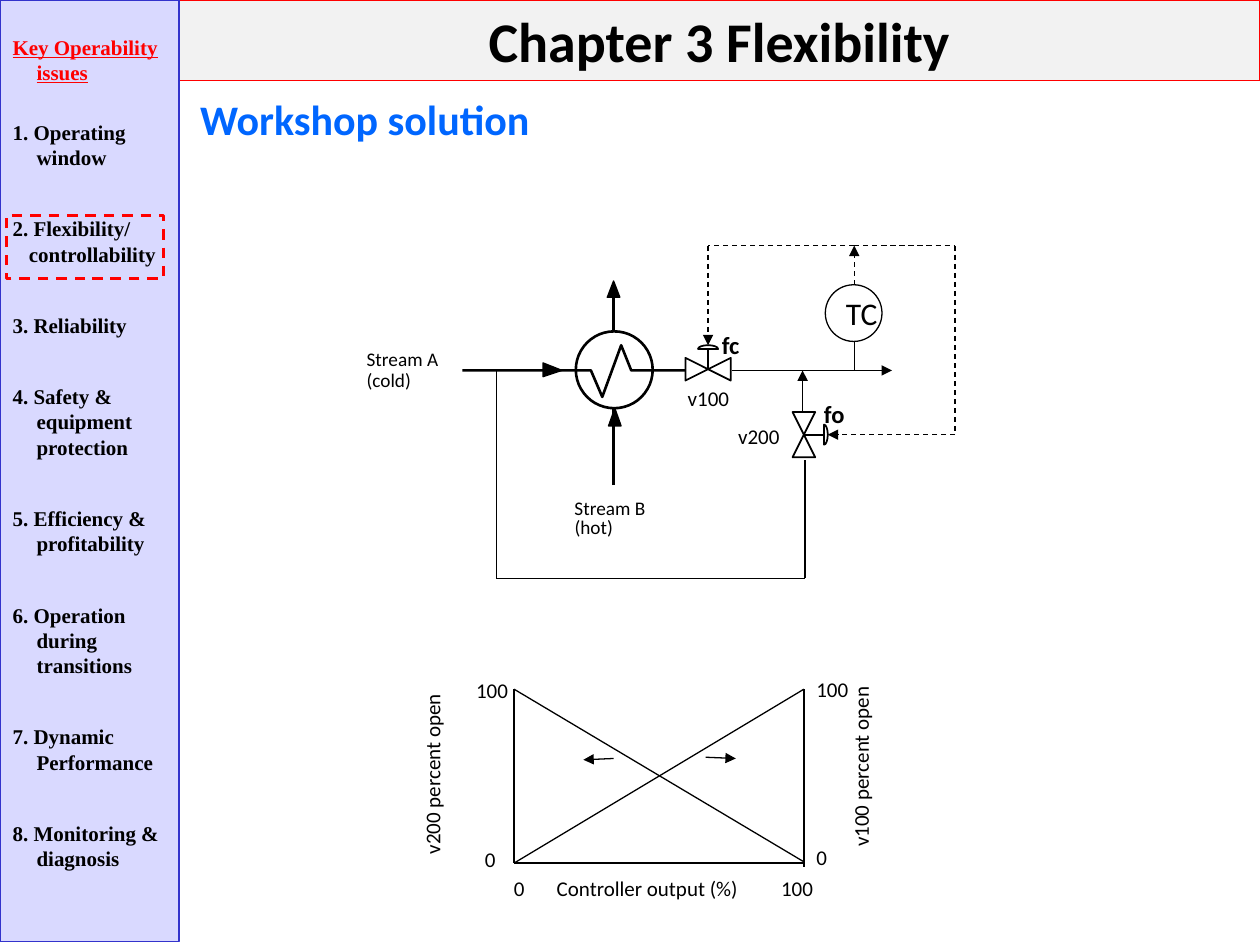
"""Build the flexibility workshop slide with its process sketch and valve chart."""
import math
from dataclasses import dataclass
from typing import NamedTuple

import lxml.etree
import pptx
import pptx.dml.color
import pptx.enum.dml
import pptx.enum.shapes
import pptx.enum.text
import pptx.oxml.ns
import pptx.slide
import pptx.util
from pptx.util import Inches

BLACK = pptx.dml.color.RGBColor(0, 0, 0)
WHITE = pptx.dml.color.RGBColor(255, 255, 255)
RED = pptx.dml.color.RGBColor(255, 0, 0)
BLUE = pptx.dml.color.RGBColor(0, 0x66, 0xFF)
NAVY = pptx.dml.color.RGBColor(0x33, 0x33, 0xCC)
LAVENDER = pptx.dml.color.RGBColor(0xD9, 0xD9, 0xFF)
GREY = pptx.dml.color.RGBColor(0xF2, 0xF2, 0xF2)
Point = tuple[float, float]


class Issue(NamedTuple):
    text: str
    gap: float = 26.4
    left: float = 0.19
    indent: float = -0.19


@dataclass
class Label:
    text: str
    left: float
    top: float
    width: float
    height: float = 0.3
    size: float = 12
    bold: bool = False
    color: pptx.dml.color.RGBColor = BLACK
    inset: bool = True
    vertical: bool = False


@dataclass
class Line:
    start: Point
    end: Point
    width: float = 0.75
    arrow: bool = False
    dashed: bool = False


ISSUES = [
    Issue("Key Operability issues", 0),
    Issue("1. Operating window", 19.9),
    Issue("2. Flexibility/"),
    Issue("controllability", 0, 0.13, 0),
    Issue("3. Reliability"),
    Issue("4. Safety & equipment protection"),
    Issue("5. Efficiency & profitability"),
    Issue("6. Operation during transitions"),
    Issue("7. Dynamic Performance"),
    Issue("8. Monitoring & diagnosis"),
]
LABELS = [
    Label("Workshop solution", 1.49, 0.69, 3.08, 0.5, 24, True, BLUE),
    Label("Stream A", 2.91, 2.76, 0.58, 0.18, 11, inset=False),
    Label("(cold)", 2.91, 2.92, 0.36, 0.18, 11, inset=False),
    Label("Stream B", 4.56, 3.94, 0.57, 0.18, 11, inset=False),
    Label("(hot)", 4.56, 4.09, 0.31, 0.18, 11, inset=False),
    Label("fc", 5.63, 2.57, 0.52, 0.34, 14, True),
    Label("fo", 6.44, 3.12, 0.52, 0.34, 14, True),
    Label("v100", 5.36, 3.01, 0.71),
    Label("v200", 5.76, 3.31, 0.71),
    Label("0", 3.98, 6.9, 0.3),
    Label("Controller output (%)", 4.32, 6.9, 1.75),
    Label("100", 6.1, 6.9, 0.48),
    Label("0", 3.75, 6.67, 0.37),
    Label("0", 6.38, 6.65, 0.42),
    Label("100", 3.68, 5.33, 0.48),
    Label("100", 6.38, 5.32, 0.48),
    Label("v100 percent open", 6.68, 5.24, 0.4, 1.58, vertical=True),
    Label("v200 percent open", 3.28, 5.3, 0.4, 1.58, vertical=True),
]
LINES = [
    Line((4.87, 3.85), (4.87, 3.24), 1.5),
    Line((4.87, 2.63), (4.87, 2.34), 1.5),
    Line((6.78, 2.71), (6.78, 2.94)),
    Line((3.94, 2.94), (3.94, 4.59)),
    Line((3.94, 4.59), (6.39, 4.59)),
    Line((6.39, 4.59), (6.39, 3.65)),
    Line((6.37, 3.27), (6.37, 2.94), arrow=True),
    Line((5.81, 2.94), (7.08, 2.94), 1, arrow=True),
    Line((6.78, 2.26), (6.78, 1.95), arrow=True, dashed=True),
    Line((6.78, 1.95), (5.62, 1.95), dashed=True),
    Line((5.62, 1.95), (5.62, 2.74), arrow=True, dashed=True),
    Line((6.78, 1.95), (7.58, 1.95), dashed=True),
    Line((7.58, 1.95), (7.58, 3.45), dashed=True),
    Line((7.58, 3.45), (6.57, 3.45), arrow=True, dashed=True),
    Line((4.08, 5.47), (4.08, 6.85)),
    Line((4.08, 6.85), (6.39, 6.85)),
    Line((6.38, 5.47), (6.38, 6.88)),
    Line((6.38, 5.47), (4.08, 6.85)),
    Line((4.08, 5.47), (6.38, 6.84)),
    Line((4.87, 6.02), (4.63, 6.03), arrow=True),
    Line((5.6, 6.01), (5.84, 6.02), arrow=True),
]
STREAM = [(5.45, 2.94), (5.01, 2.94), (4.93, 2.74), (4.78, 3.15), (4.69, 2.94), (3.67, 2.94)]
ARROWHEADS = [
    [(4.88, 3.24), (4.83, 3.38), (4.93, 3.38)],
    [(4.31, 2.99), (4.31, 2.88), (4.46, 2.94)],
    [(4.87, 2.23), (4.82, 2.36), (4.92, 2.36)],
]
BODY = [(-0.18, -0.09), (0.18, 0.09), (0.18, -0.09), (-0.18, 0.09)]
CAP = [(-0.08 * math.cos(math.pi * step / 8), -0.16 - 0.03 * math.sin(math.pi * step / 8))
       for step in range(9)]


def style_shape(shape, fill, line, width: float) -> None:
    if fill is None:
        shape.fill.background()
    else:
        shape.fill.solid()
        shape.fill.fore_color.rgb = fill
    shape.line.color.rgb = line
    shape.line.width = pptx.util.Pt(width)
    shape.shadow.inherit = False


def style_font(font, name: str, size: float, color, bold: bool = False) -> None:
    font.name, font.size, font.bold = name, pptx.util.Pt(size), bold
    font.color.rgb = color


def place(shape, left: float, top: float, width: float, height: float) -> None:
    shape.left, shape.top = Inches(left), Inches(top)
    shape.width, shape.height = Inches(width), Inches(height)


def draw_outline(slide: pptx.slide.Slide, points: list[Point], fill=None,
                 width: float = 1, close: bool = True) -> None:
    corners = [(Inches(x), Inches(y)) for x, y in points]
    builder = slide.shapes.build_freeform(*corners[0])
    builder.add_line_segments(corners[1:], close=close)
    style_shape(builder.convert_to_shape(), fill, BLACK, width)


def draw_oval(slide: pptx.slide.Slide, left: float, top: float, size: float, width: float):
    oval = slide.shapes.add_shape(pptx.enum.shapes.MSO_SHAPE.OVAL, Inches(left), Inches(top),
                                  Inches(size), Inches(size))
    style_shape(oval, None, BLACK, width)
    return oval


def draw_line(slide: pptx.slide.Slide, line: Line) -> None:
    connector = slide.shapes.add_connector(
        pptx.enum.shapes.MSO_CONNECTOR.STRAIGHT, *map(Inches, line.start + line.end))
    connector.line.color.rgb = BLACK
    connector.line.width = pptx.util.Pt(line.width)
    if line.dashed:
        connector.line.dash_style = pptx.enum.dml.MSO_LINE.DASH
    qn = pptx.oxml.ns.qn
    properties = connector._element.spPr
    if line.arrow:
        lxml.etree.SubElement(properties.find(qn("a:ln")), qn("a:tailEnd"), type="triangle")
    lxml.etree.SubElement(properties, qn("a:effectLst"))


def draw_valve(slide: pptx.slide.Slide, x: float, y: float, angle: float) -> None:
    cosine, sine = math.cos(math.radians(angle)), math.sin(math.radians(angle))

    def turn(points: list[Point]) -> list[Point]:
        return [(x + a * cosine - b * sine, y + a * sine + b * cosine) for a, b in points]

    draw_outline(slide, turn(BODY), WHITE)
    draw_outline(slide, turn(CAP), WHITE)
    draw_line(slide, Line(*turn([(0, 0), (0, -0.16)]), width=1))


def draw_label(slide: pptx.slide.Slide, label: Label) -> None:
    box = slide.shapes.add_textbox(0, 0, 0, 0)
    place(box, label.left, label.top, label.width, label.height)
    frame = box.text_frame
    frame.word_wrap = label.inset
    if not label.inset:
        frame.margin_left = frame.margin_right = frame.margin_top = frame.margin_bottom = 0
    if label.vertical:
        frame._txBody.bodyPr.set("vert", "vert270")
    frame.text = label.text
    style_font(frame.paragraphs[0].runs[0].font, "Calibri", label.size, label.color, label.bold)


def fill_sidebar(sidebar) -> None:
    place(sidebar, 0, 0, 1.42, 7.47)
    style_shape(sidebar, LAVENDER, NAVY, 0.75)
    frame = sidebar.text_frame
    frame.auto_size = pptx.enum.text.MSO_AUTO_SIZE.NONE
    frame.margin_top = Inches(0.27)
    frame.text = "\n".join(issue.text for issue in ISSUES)
    for paragraph, issue in zip(frame.paragraphs, ISSUES):
        paragraph.line_spacing = pptx.util.Pt(14.4)
        paragraph.space_before = pptx.util.Pt(issue.gap)
        properties = paragraph._p.get_or_add_pPr()
        properties.set("marL", str(Inches(issue.left)))
        properties.set("indent", str(Inches(issue.indent)))
        lxml.etree.SubElement(properties, pptx.oxml.ns.qn("a:buNone"))
        style_font(paragraph.runs[0].font, "Times New Roman", 12, BLACK, True)
    heading = frame.paragraphs[0].runs[0].font
    heading.color.rgb, heading.underline = RED, True


def fill_title(title) -> None:
    place(title, 1.42, 0, 8.58, 0.64)
    style_shape(title, GREY, RED, 0.75)
    frame = title.text_frame
    frame.text = "Chapter 3 Flexibility"
    frame.auto_size = pptx.enum.text.MSO_AUTO_SIZE.NONE
    frame.paragraphs[0].alignment = pptx.enum.text.PP_ALIGN.CENTER
    style_font(frame.paragraphs[0].runs[0].font, "Calibri", 32, BLACK, True)


def main() -> None:
    presentation = pptx.Presentation()
    presentation.slide_width, presentation.slide_height = Inches(10), Inches(7.5)
    slide = presentation.slides.add_slide(presentation.slide_layouts[1])
    fill_title(slide.shapes.title)
    fill_sidebar(slide.placeholders[1])
    highlight = slide.shapes.add_shape(pptx.enum.shapes.MSO_SHAPE.RECTANGLE, 0, 0, 0, 0)
    place(highlight, 0.05, 1.71, 1.25, 0.5)
    style_shape(highlight, None, RED, 1.5)
    highlight.line.dash_style = pptx.enum.dml.MSO_LINE.DASH
    draw_outline(slide, STREAM, width=1.5, close=False)
    draw_oval(slide, 4.57, 2.63, 0.61, 1.5)
    for arrowhead in ARROWHEADS:
        draw_outline(slide, arrowhead, BLACK, 0)
    controller = draw_oval(slide, 6.55, 2.26, 0.45, 0.75)
    controller.text_frame.word_wrap = False
    controller.text_frame.text = "TC"
    style_font(controller.text_frame.paragraphs[0].runs[0].font, "Calibri", 18, BLACK)
    for line in LINES:
        draw_line(slide, line)
    draw_valve(slide, 5.62, 2.93, 0)
    draw_valve(slide, 6.38, 3.45, 90)
    for label in LABELS:
        draw_label(slide, label)
    presentation.save("out.pptx")


if __name__ == "__main__":
    main()
